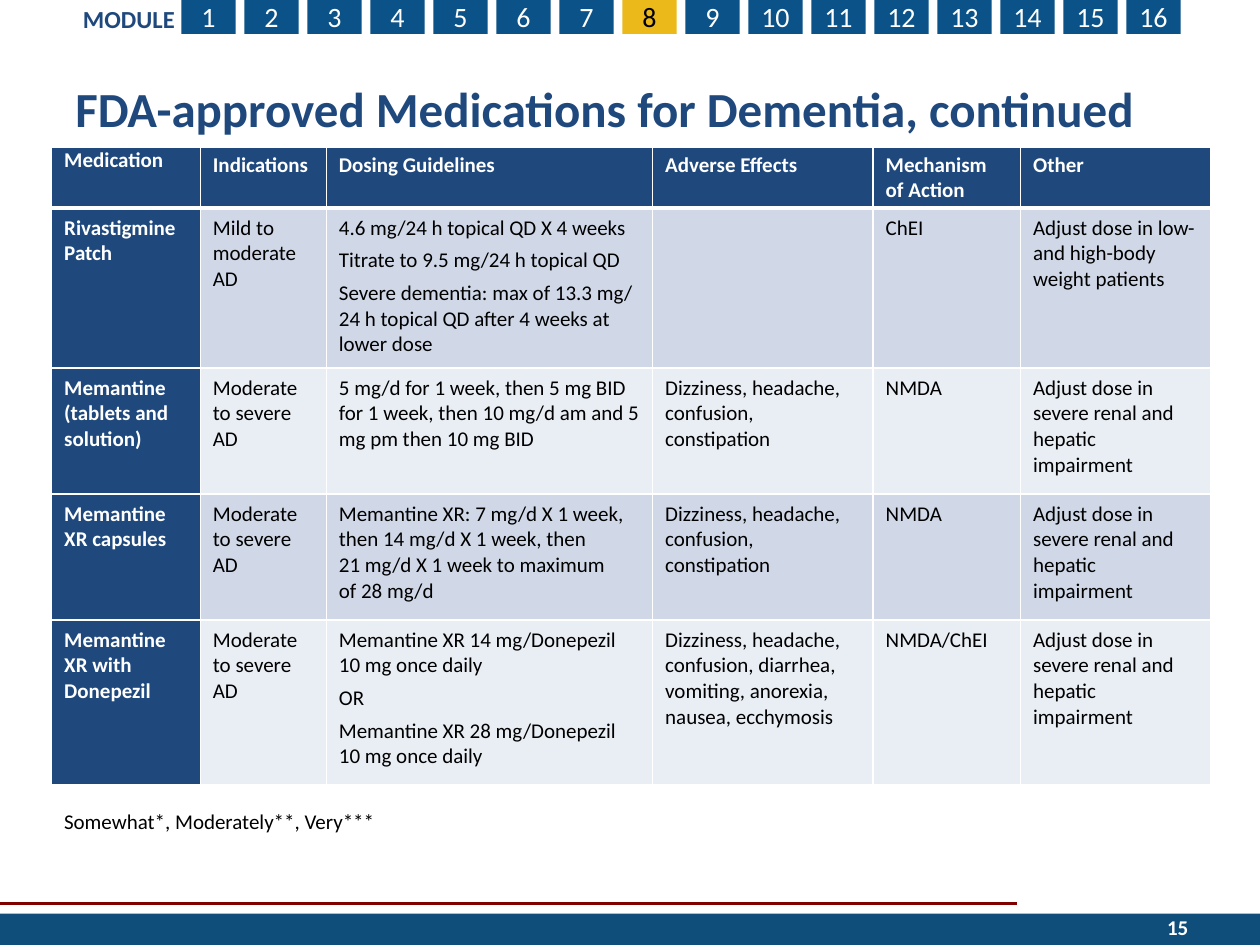
from lxml.etree import SubElement
from pptx import Presentation
from pptx.dml.color import RGBColor
from pptx.enum.shapes import MSO_CONNECTOR, MSO_SHAPE
from pptx.enum.text import MSO_ANCHOR, PP_ALIGN
from pptx.oxml.ns import qn
from pptx.util import Emu, Pt

SCALE = 9144
NAVY = RGBColor(0x1F, 0x49, 0x7D)
BLUE = RGBColor(0x0A, 0x52, 0x87)
DEEP = RGBColor(0x0F, 0x4D, 0x7B)
GOLD = RGBColor(0xEB, 0xBA, 0x1A)
MAROON = RGBColor(0x80, 0x00, 0x00)
DARK = RGBColor(0xD0, 0xD8, 0xE8)
LIGHT = RGBColor(0xE9, 0xED, 0xF4)
WHITE = RGBColor(0xFF, 0xFF, 0xFF)
BLACK = RGBColor(0x00, 0x00, 0x00)

COLS = [118, 100, 259, 175, 117, 151]
ROWS = [48, 127, 100, 100, 131]
RENAL = "Adjust dose in severe renal and hepatic impairment"
SEVERE = "Moderate to severe AD"
DIZZY = "Dizziness, headache, confusion, constipation"
DATA = [
    ["Medication", "Indications", "Dosing Guidelines", "Adverse Effects",
     "Mechanism\vof Action", "Other"],
    ["Rivastigmine Patch", "Mild to moderate AD",
     ["4.6 mg/24 h topical QD X 4 weeks",
      "Titrate to 9.5 mg/24 h topical QD",
      "Severe dementia: max of 13.3 mg/\v24 h topical QD after 4 weeks at lower dose"],
     "", "ChEI", "Adjust dose in low- and high-body weight patients"],
    ["Memantine (tablets and solution)", SEVERE,
     "5 mg/d for 1 week, then 5 mg BID for 1 week, then 10 mg/d am and 5 mg pm then 10 mg BID",
     DIZZY, "NMDA", RENAL],
    ["Memantine XR capsules", SEVERE,
     "Memantine XR: 7 mg/d X 1 week, then 14 mg/d X 1 week, then\v"
     "21 mg/d X 1 week to maximum\vof 28 mg/d",
     DIZZY, "NMDA", RENAL],
    ["Memantine XR with Donepezil", SEVERE,
     ["Memantine XR 14 mg/Donepezil 10 mg once daily", "OR",
      "Memantine XR 28 mg/Donepezil 10 mg once daily"],
     "Dizziness, headache, confusion, diarrhea, vomiting, anorexia, nausea, ecchymosis",
     "NMDA/ChEI", RENAL],
]


def px(*sizes):
    """Turn px lengths into EMU."""
    return [Emu(size * SCALE) for size in sizes]


def style(para, size, color, bold=False, align=PP_ALIGN.LEFT):
    """Set the font and alignment of a paragraph."""
    para.alignment = align
    font = para.font
    font.name, font.size, font.bold = "Calibri", Pt(size), bold
    font.color.rgb = color


def add_text(slide, box, text, size, color, bold=False,
             align=PP_ALIGN.LEFT, anchor=MSO_ANCHOR.TOP):
    """Add a text box with one paragraph."""
    frame = slide.shapes.add_textbox(*px(*box)).text_frame
    frame.word_wrap = True
    frame.vertical_anchor = anchor
    frame.text = text
    style(frame.paragraphs[0], size, color, bold, align)


def add_rect(slide, box, fill):
    """Add a plain filled rectangle."""
    rect = slide.shapes.add_shape(MSO_SHAPE.RECTANGLE, *px(*box))
    rect.shadow.inherit = False
    rect.fill.solid()
    rect.fill.fore_color.rgb = fill
    rect.line.fill.background()
    return rect


def add_nav(slide, box, count, current):
    """Add the module label and its row of numbers."""
    left, top, width, height = box
    add_text(slide, (left, top - 1, 101, 34), "MODULE", 14, NAVY, True)
    start, tab = left + 88, 43
    step = (left + width - tab - start) // (count - 1)
    for num in range(1, count + 1):
        active = num == current
        spot = (start + (num - 1) * step, top, tab, height)
        frame = add_rect(slide, spot, GOLD if active else BLUE).text_frame
        frame.margin_left = frame.margin_right = 0
        frame.vertical_anchor = MSO_ANCHOR.MIDDLE
        frame.text = str(num)
        style(frame.paragraphs[0], 16, BLACK if active else WHITE,
              align=PP_ALIGN.CENTER)


def add_edge(cell, side, width):
    """Give one side of a cell a white border."""
    props = cell._tc.get_or_add_tcPr()
    line = SubElement(props, qn("a:" + side), w=str(Pt(width)))
    fill = SubElement(line, qn("a:solidFill"))
    SubElement(fill, qn("a:srgbClr"), val=str(WHITE))


def fill_cell(cell, text, row, col):
    """Write and style one cell of the table."""
    head = row == 0
    strong = head or col == 0
    for side in ("lnL", "lnR", "lnT", "lnB"):
        thick = (row, side) in ((0, "lnB"), (1, "lnT"))
        add_edge(cell, side, 3 if thick else 1)
    cell.fill.solid()
    cell.fill.fore_color.rgb = NAVY if strong else DARK if row % 2 else LIGHT
    cell.margin_left, cell.margin_right = px(10, 10)
    pad = (0 if col == 0 else 4, 0 if col == 0 else 4) if head else (6, 0)
    cell.margin_top, cell.margin_bottom = px(*pad)
    lines = text if isinstance(text, list) else [text]
    frame = cell.text_frame
    for i, line in enumerate(lines):
        para = frame.paragraphs[0] if i == 0 else frame.add_paragraph()
        para.text = line
        para.space_after = Pt(4 if len(lines) > 1 else 8)
        style(para, 12, WHITE if strong else BLACK, strong)


def add_drugs(slide, box):
    """Add the medication table."""
    table = slide.shapes.add_table(len(ROWS), len(COLS), *px(*box)).table
    table.horz_banding = False
    for col, width in zip(table.columns, px(*COLS)):
        col.width = width
    for row, height in zip(table.rows, px(*ROWS)):
        row.height = height
    for r, line in enumerate(DATA):
        for c, text in enumerate(line):
            fill_cell(table.cell(r, c), text, r, c)


def add_footer(slide, box, page):
    """Add the rule, the band and the page number."""
    left, top, width, height = box
    rule = slide.shapes.add_connector(
        MSO_CONNECTOR.STRAIGHT, *px(left - 1, top, left + 807, top))
    rule.line.color.rgb = MAROON
    rule.line.width = Pt(1.5)
    SubElement(rule._element.spPr, qn("a:effectLst"))
    add_rect(slide, (left, top + 8, width, height - 8), DEEP)
    add_text(slide, (left + 720, top - 1, 233, 40), page, 12, WHITE, True,
             PP_ALIGN.RIGHT, MSO_ANCHOR.MIDDLE)


def main():
    """Build and save the slide."""
    deck = Presentation()
    deck.slide_width, deck.slide_height = px(1000, 750)
    slide = deck.slides.add_slide(deck.slide_layouts[6])
    add_footer(slide, (0, 717, 1000, 33), "15")
    add_nav(slide, (56, -1, 881, 28), 16, 8)
    add_text(slide, (50, 62, 900, 47),
             "FDA-approved Medications for Dementia, continued",
             28, NAVY, True, anchor=MSO_ANCHOR.MIDDLE)
    add_drugs(slide, (41, 117, sum(COLS), sum(ROWS)))
    add_text(slide, (41, 637, 409, 30), "Somewhat*, Moderately**, Very***",
             12, BLACK)
    deck.save("out.pptx")


if __name__ == "__main__":
    main()
